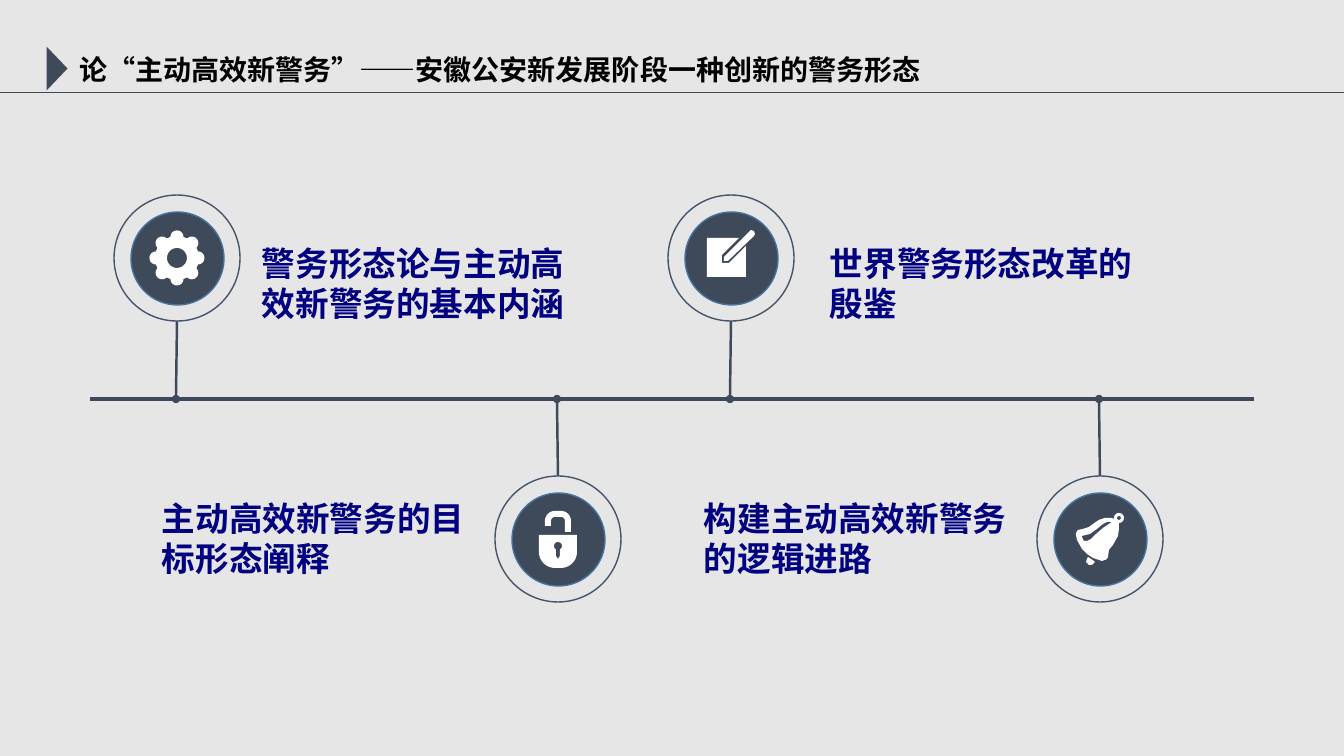
from math import cos, radians, sin

from lxml import etree
from pptx import Presentation
from pptx.dml.color import RGBColor
from pptx.enum.shapes import MSO_CONNECTOR, MSO_SHAPE
from pptx.enum.text import MSO_ANCHOR, MSO_AUTO_SIZE, PP_ALIGN
from pptx.oxml.ns import qn
from pptx.util import Pt

STRAIGHT = MSO_CONNECTOR.STRAIGHT
OVAL = MSO_SHAPE.OVAL
TRIANGLE = MSO_SHAPE.ISOSCELES_TRIANGLE
TOP = MSO_ANCHOR.TOP
FIT_SHAPE = MSO_AUTO_SIZE.SHAPE_TO_FIT_TEXT
LEFT = PP_ALIGN.LEFT

SLATE = RGBColor(0x3E, 0x4A, 0x5A)
RING = RGBColor(0x44, 0x54, 0x6A)
DISC_EDGE = RGBColor(0x43, 0x73, 0x9E)
NAVY = RGBColor(0x00, 0x00, 0x80)
BLACK = RGBColor(0x00, 0x00, 0x00)
WHITE = RGBColor(0xFF, 0xFF, 0xFF)
BACKGROUND = RGBColor(0xE7, 0xE6, 0xE6)

SLIDE_WIDTH, SLIDE_HEIGHT = 1344, 756
EMU_PER_PX = 12192000 / SLIDE_WIDTH
AXIS_Y = 399
UPPER_Y, LOWER_Y = 258, 539
RING_SIZE, DISC_SIZE = 126, 93
LABEL_WIDTH, LABEL_HEIGHT = 343, 92


def px(length):
    return round(length * EMU_PER_PX)


def arc(x, y, radius, start, end, steps=16):
    angles = [radians(start + (end - start) * i / steps) for i in range(steps + 1)]
    return [(x + radius * cos(a), y + radius * sin(a)) for a in angles]


def gear_outline():
    outline = []
    for angle in range(0, 360, 45):
        x, y = 21 * cos(radians(angle)), 21 * sin(radians(angle))
        outline += arc(x, y, 6.5, angle - 90, angle + 90)
    return outline


GEAR = [gear_outline(), arc(0, 0, 10, 0, 360, 32)]

PADLOCK = [
    [(-13, -13)] + arc(-3, -18, 10, 180, 270) + arc(3, -18, 10, 270, 360)
    + [(13, -7), (7, -7)] + arc(3, -18, 4, 360, 270) + arc(-3, -18, 4, 270, 180)
    + [(-7, -13)],
    [(-19, -4), (19, -4)] + arc(3, 13, 16, 0, 90) + arc(-3, 13, 16, 90, 180),
    arc(0, 7, 4, 120, 420) + [(2, 17), (0, 20), (-2, 17)],
]

NOTE = [
    [(-24, -20), (8, -20), (-9, -3), (-9, 5), (-2, 5), (15, -12), (15, 19), (-24, 19)],
    [(-7, -1), (-7, 3), (-3, 3), (23, -22), (24, -24), (23, -27), (20, -28), (18, -26)],
]

BELL = [
    [(15, -20), (11, -21), (5, -21), (-1, -19), (-7, -15), (-11, -12), (-17, -10),
     (-22, -9), (-24, -6), (-24, -4), (-23, 1), (-18, 10), (-13, 15), (-7, 19),
     (2, 22), (5, 21), (7, 20), (8, 18), (9, 11), (13, 6), (18, -3), (19, -10)]
    + arc(19, -21, 5, 90, -180),
    arc(19, -21, 2, 0, 360),
    [(12, -17), (3, -11), (-5, -4), (-9, 0), (-13, 2), (-16, 2), (-18, -2),
     (-18, -3), (-10, -5), (-3, -10), (3, -15), (7, -17)],
    [(-6, 22), (-12, 18), (-13, 20), (-14, 23), (-11, 26), (-8, 26), (-5, 23)],
]

TITLE = "论“主动高效新警务”——安徽公安新发展阶段一种创新的警务形态"

MILESTONES = [
    (177, UPPER_Y, GEAR, 252, 238, "警务形态论与主动高效新警务的基本内涵"),
    (558, LOWER_Y, PADLOCK, 152, 493, "主动高效新警务的目标形态阐释"),
    (731, UPPER_Y, NOTE, 820, 238, "世界警务形态改革的殷鉴"),
    (1100, LOWER_Y, BELL, 694, 493, "构建主动高效新警务的逻辑进路"),
]


def place(shape, left, top, width, height):
    shape.left, shape.top = px(left), px(top)
    shape.width, shape.height = px(width), px(height)


def add_run(paragraph, text, font_name, size, color):
    run = paragraph.add_run()
    run.text = text
    font = run.font
    font.name, font.size, font.bold = font_name, Pt(size), True
    font.color.rgb = color
    properties = run._r.get_or_add_rPr()
    properties.set("lang", "zh-CN")
    east_asian = etree.Element(qn("a:ea"), typeface=font_name)
    properties.find(qn("a:latin")).addnext(east_asian)


def set_title(slide):
    title = slide.shapes.title
    place(title, 69, 37, 862, 54)
    frame = title.text_frame
    frame.word_wrap = False
    frame.auto_size = FIT_SHAPE
    frame.vertical_anchor = TOP
    paragraph = frame.paragraphs[0]
    paragraph.alignment = LEFT
    paragraph.line_spacing = 1.3
    add_run(paragraph, TITLE, "Noto Sans CJK SC", 20, BLACK)


def add_label(slide, left, top, text):
    label = slide.shapes.add_textbox(px(left), px(top), px(LABEL_WIDTH), px(LABEL_HEIGHT))
    frame = label.text_frame
    frame.word_wrap = True
    frame.auto_size = FIT_SHAPE
    add_run(frame.paragraphs[0], text, "Calibri", 24, NAVY)


def add_line(shapes, start, end, weight, dot=False):
    line = shapes.add_connector(STRAIGHT, *map(px, start + end))
    line.line.color.rgb = SLATE
    line.line.width = Pt(weight)
    if dot:
        etree.SubElement(line.line._get_or_add_ln(), qn("a:tailEnd"), type="oval")
    etree.SubElement(line._element.spPr, qn("a:effectLst"))


def add_circle(shapes, x, y, size, edge, fill=None):
    circle = shapes.add_shape(OVAL, 0, 0, 0, 0)
    place(circle, x - size // 2, y - size // 2, size, size)
    circle.shadow.inherit = False
    circle.line.color.rgb = edge
    circle.line.width = Pt(1)
    if fill is None:
        circle.fill.background()
    else:
        circle.fill.solid()
        circle.fill.fore_color.rgb = fill


def fill_plain(shape, color):
    shape.shadow.inherit = False
    shape.fill.solid()
    shape.fill.fore_color.rgb = color
    shape.line.fill.background()


def add_icon(slide, x, y, contours):
    placed = [[(px(x + dx), px(y + dy)) for dx, dy in contour] for contour in contours]
    builder = slide.shapes.build_freeform(*placed[0][0], scale=1.0)
    builder.add_line_segments(placed[0][1:], close=True)
    for contour in placed[1:]:
        builder.move_to(*contour[0])
        builder.add_line_segments(contour[1:], close=True)
    fill_plain(builder.convert_to_shape(), WHITE)


def add_badge(slide, x, y):
    shapes = slide.shapes.add_group_shape().shapes
    ring_edge = y + RING_SIZE // 2 * (1 if y < AXIS_Y else -1)
    add_line(shapes, (x, ring_edge), (x - 1, AXIS_Y), 1.75, dot=True)
    add_circle(shapes, x, y, RING_SIZE, RING)
    add_circle(shapes, x, y, DISC_SIZE, DISC_EDGE, SLATE)


def add_header(slide):
    set_title(slide)
    marker = slide.shapes.add_shape(TRIANGLE, px(35), px(58), px(44), px(21))
    marker.rotation = 90
    fill_plain(marker, SLATE)
    add_line(slide.shapes, (0, 92), (SLIDE_WIDTH, 92), 0.5)


def main():
    presentation = Presentation()
    presentation.slide_width = px(SLIDE_WIDTH)
    presentation.slide_height = px(SLIDE_HEIGHT)
    slide = presentation.slides.add_slide(presentation.slide_layouts.get_by_name("Title Only"))
    slide.background.fill.solid()
    slide.background.fill.fore_color.rgb = BACKGROUND
    add_header(slide)
    add_line(slide.shapes, (90, AXIS_Y), (1254, AXIS_Y), 2.25)
    for x, y, icon, label_left, label_top, text in MILESTONES:
        add_badge(slide, x, y)
        add_label(slide, label_left, label_top, text)
        add_icon(slide, x, y, icon)
    presentation.save("out.pptx")


if __name__ == "__main__":
    main()
